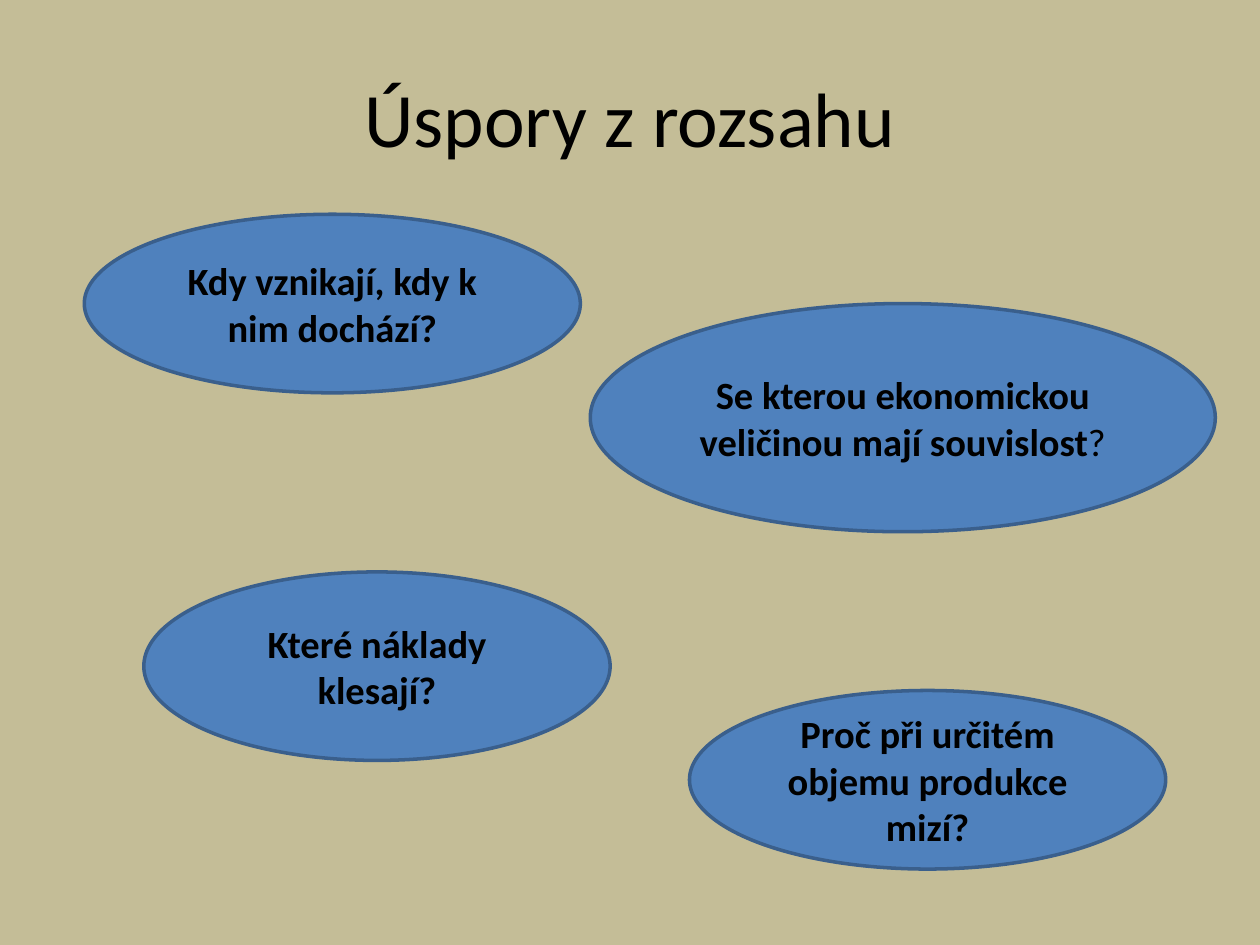
from dataclasses import dataclass

from pptx import Presentation
from pptx.dml.color import RGBColor
from pptx.enum.shapes import MSO_SHAPE
from pptx.enum.text import MSO_ANCHOR, PP_ALIGN
from pptx.util import Cm, Pt

OVAL = MSO_SHAPE.OVAL
MIDDLE = MSO_ANCHOR.MIDDLE
CENTER = PP_ALIGN.CENTER


@dataclass(frozen=True)
class Theme:
    font: str = "Calibri"
    background: RGBColor = RGBColor(0xC4, 0xBD, 0x97)
    text: RGBColor = RGBColor(0, 0, 0)
    fill: RGBColor = RGBColor(0x4F, 0x81, 0xBD)
    outline: RGBColor = RGBColor(0x3A, 0x5F, 0x8C)
    outline_width: Pt = Pt(2)
    title_size: Pt = Pt(44)
    question_size: Pt = Pt(22)


THEME = Theme()

TITLE_BOX = (1.27, 0.76, 22.86, 3.18)
QUESTIONS = [
    ((1.7, 4.32, 10, 3.6), [("Kdy vznikají, kdy k nim dochází?", True)]),
    ((11.9, 6.12, 12.6, 4.6),
     [("Se kterou ekonomickou veličinou mají souvislost", True), ("?", False)]),
    ((2.9, 11.53, 9.4, 3.8), [("Které náklady klesají?", True)]),
    ((13.9, 13.92, 9.6, 3.6), [("Proč při určitém objemu produkce mizí?", True)]),
]


def write_centered(shape, spans, size):
    frame = shape.text_frame
    frame.word_wrap = True
    frame.vertical_anchor = MIDDLE
    para = frame.paragraphs[0]
    para.alignment = CENTER
    for text, bold in spans:
        span = para.add_run()
        span.text = text
        span.font.name = THEME.font
        span.font.size = size
        span.font.bold = bold
        span.font.color.rgb = THEME.text


def add_title(page, box, text):
    title = page.shapes.add_textbox(*map(Cm, box))
    write_centered(title, [(text, False)], THEME.title_size)


def add_question(page, box, spans):
    bubble = page.shapes.add_shape(OVAL, *map(Cm, box))
    bubble.shadow.inherit = False
    bubble.fill.solid()
    bubble.fill.fore_color.rgb = THEME.fill
    bubble.line.color.rgb = THEME.outline
    bubble.line.width = THEME.outline_width
    write_centered(bubble, spans, THEME.question_size)


def main():
    deck = Presentation()
    deck.slide_width, deck.slide_height = Cm(25.4), Cm(19.05)
    page = deck.slides.add_slide(deck.slide_layouts[6])
    page.background.fill.solid()
    page.background.fill.fore_color.rgb = THEME.background
    add_title(page, TITLE_BOX, "Úspory z rozsahu")
    for box, spans in QUESTIONS:
        add_question(page, box, spans)
    deck.save("out.pptx")


if __name__ == "__main__":
    main()
